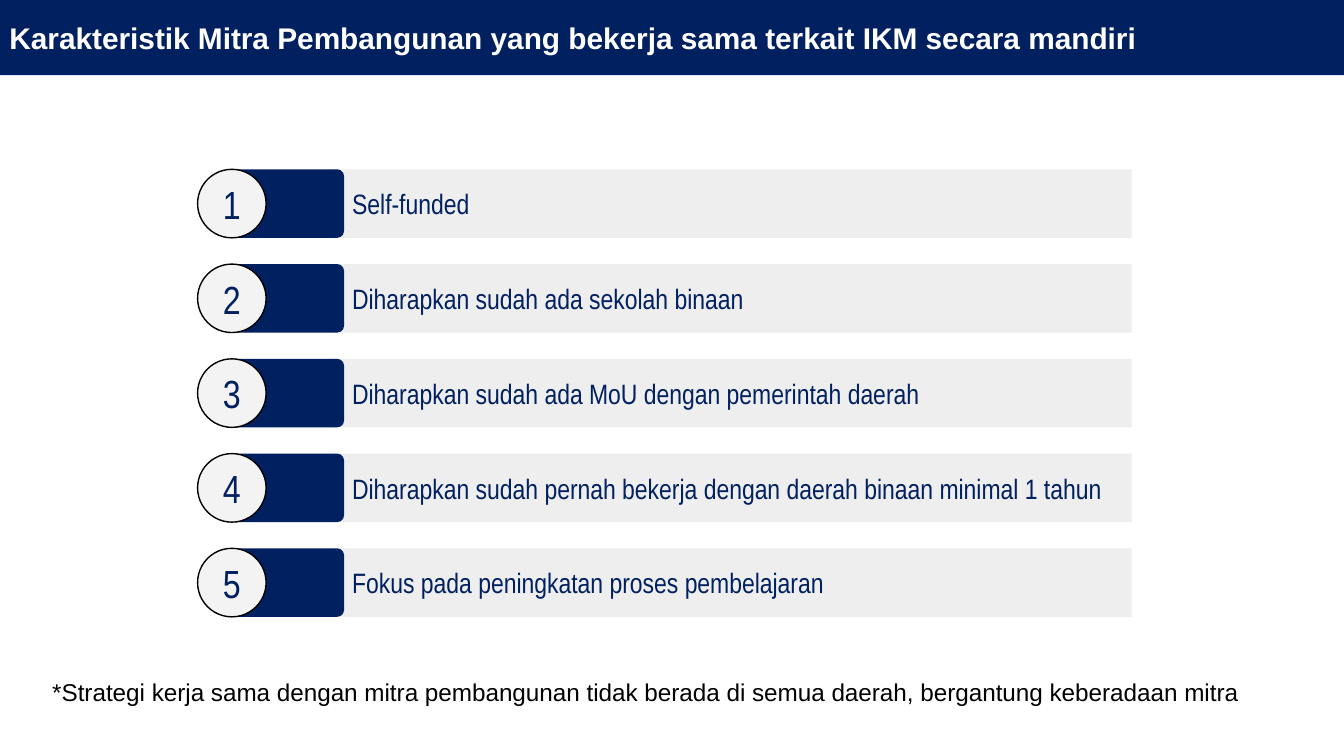
from collections import namedtuple

from pptx import Presentation
from pptx.dml.color import RGBColor
from pptx.enum.shapes import MSO_SHAPE
from pptx.enum.text import MSO_ANCHOR, MSO_AUTO_SIZE, PP_ALIGN
from pptx.util import Inches, Pt

RECTANGLE = MSO_SHAPE.RECTANGLE
CIRCLE = MSO_SHAPE.OVAL
ROUNDED_TAB = MSO_SHAPE.ROUND_2_SAME_RECTANGLE
LEFT, CENTER = PP_ALIGN.LEFT, PP_ALIGN.CENTER
TOP, MIDDLE = MSO_ANCHOR.TOP, MSO_ANCHOR.MIDDLE

NAVY = RGBColor(0x00, 0x20, 0x60)
GREY = RGBColor(0xEE, 0xEE, 0xEE)
PALE = RGBColor(0xF3, 0xF3, 0xF3)
WHITE = RGBColor(0xFF, 0xFF, 0xFF)
BLACK = RGBColor(0x00, 0x00, 0x00)

Box = namedtuple("Box", "left top width height")
PAGE = Box(0, 0, 10, 10 * 9 / 16)
HEADER = Box(0, 0, PAGE.width, 0.56)
LIST = Box(1.47, 1.26, 6.95, 3.33)
FOOTNOTE = Box(0.29, 4.94, 9.58, 0.42)
ROW_HEIGHT = 0.51

TITLE = "Karakteristik Mitra Pembangunan yang bekerja sama terkait IKM secara mandiri"
CRITERIA = [
    "Self-funded",
    "Diharapkan sudah ada sekolah binaan",
    "Diharapkan sudah ada MoU dengan pemerintah daerah",
    "Diharapkan sudah pernah bekerja dengan daerah binaan minimal 1 tahun",
    "Fokus pada peningkatan proses pembelajaran",
]
NOTE = ("*Strategi kerja sama dengan mitra pembangunan tidak berada di semua "
        "daerah, bergantung keberadaan mitra")


def to_inches(box):
    return [Inches(length) for length in box]


def write_text(shape, text, size, color, font="Arial Narrow", bold=False,
               align=LEFT, anchor=MIDDLE, insets=(0.07, 0.07, 0.07, 0.07)):
    frame = shape.text_frame
    frame.word_wrap = True
    frame.auto_size = MSO_AUTO_SIZE.NONE
    frame.vertical_anchor = anchor
    (frame.margin_left, frame.margin_top,
     frame.margin_right, frame.margin_bottom) = [Inches(inset) for inset in insets]
    para = frame.paragraphs[0]
    para.alignment = align
    span = para.add_run()
    span.text = text
    span.font.name = font
    span.font.size = Pt(size)
    span.font.bold = bold
    span.font.color.rgb = color


def add_filled(page, kind, box, fill, line=None):
    shape = page.shapes.add_shape(kind, *to_inches(box))
    shape.shadow.inherit = False
    shape.fill.solid()
    shape.fill.fore_color.rgb = fill
    if line is None:
        shape.line.fill.background()
    else:
        shape.line.color.rgb = line
        shape.line.width = Pt(0.75)
    return shape


def add_header(page, box):
    title = page.shapes.title
    title.left, title.top, title.width, title.height = to_inches(box)
    title.fill.solid()
    title.fill.fore_color.rgb = NAVY
    write_text(title, TITLE, 16, WHITE, font="Arial", bold=True,
               insets=(0.07, 0.04, 0.07, 0.04))


def add_tab(page, box):
    """Add a navy tab rounded on its right side: an upright shape turned 90°."""
    overhang = (box.width - box.height) / 2
    upright = Box(box.left + overhang, box.top - overhang, box.height, box.width)
    tab = add_filled(page, ROUNDED_TAB, upright, NAVY)
    tab.adjustments[0] = 0.1
    tab.rotation = 90


def add_criterion(page, box, number, text):
    bar = add_filled(page, RECTANGLE,
                     Box(box.left + 1, box.top, box.width - 1, box.height), GREY)
    write_text(bar, text, 15, NAVY, insets=(0.15, 0.07, 0.07, 0.07))
    add_tab(page, Box(box.left + 0.22, box.top, 0.87, box.height))
    badge = add_filled(page, CIRCLE,
                       Box(box.left, box.top, box.height, box.height), PALE, BLACK)
    write_text(badge, str(number), 21, NAVY, align=CENTER)


def add_criteria(page, box):
    pitch = (box.height - ROW_HEIGHT) / (len(CRITERIA) - 1)
    for index, text in enumerate(CRITERIA):
        row = Box(box.left, box.top + index * pitch, box.width, ROW_HEIGHT)
        add_criterion(page, row, index + 1, text)


def add_footnote(page, box):
    note = page.shapes.add_textbox(*to_inches(box))
    write_text(note, NOTE, 13, BLACK, font="Arial", anchor=TOP,
               insets=(0.1, 0.1, 0.1, 0.1))


def main():
    deck = Presentation()
    deck.slide_width, deck.slide_height = Inches(PAGE.width), Inches(PAGE.height)
    title_only = deck.slide_layouts[5]
    page = deck.slides.add_slide(title_only)
    add_header(page, HEADER)
    add_criteria(page, LIST)
    add_footnote(page, FOOTNOTE)
    deck.save("out.pptx")


if __name__ == "__main__":
    main()
